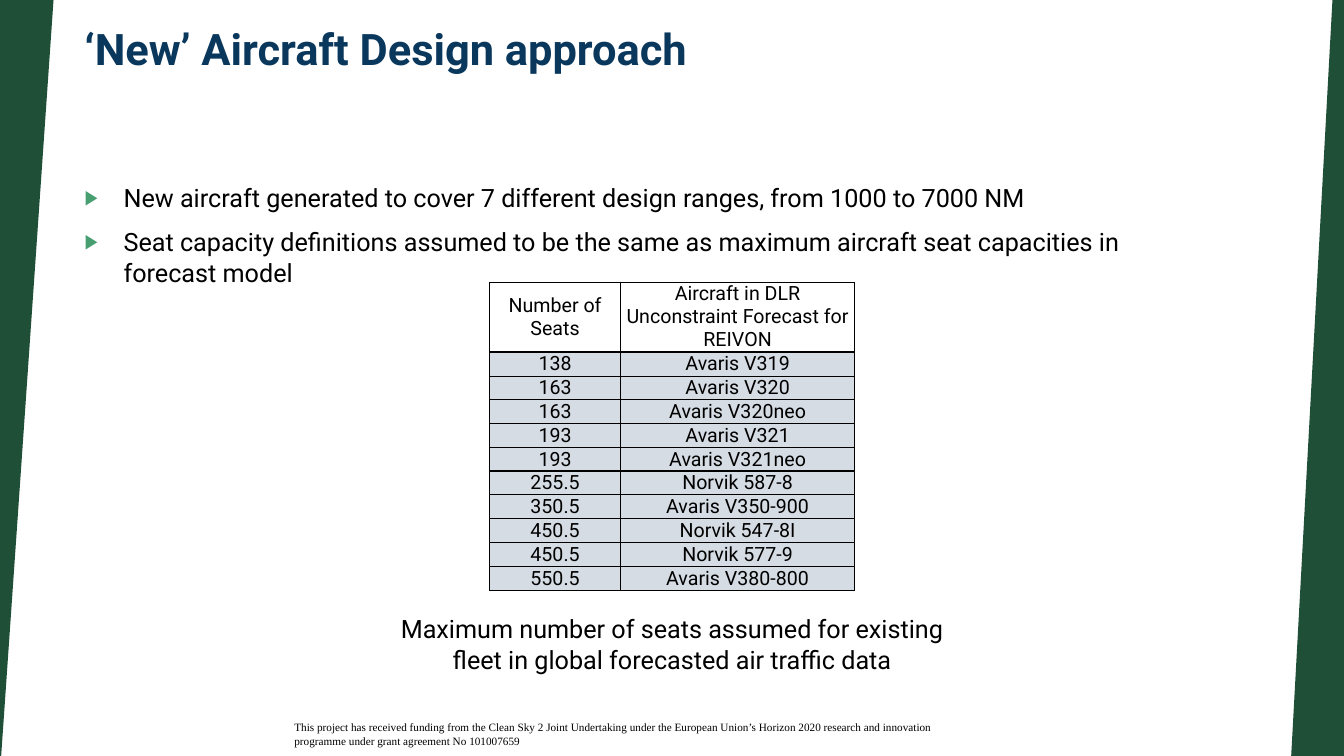
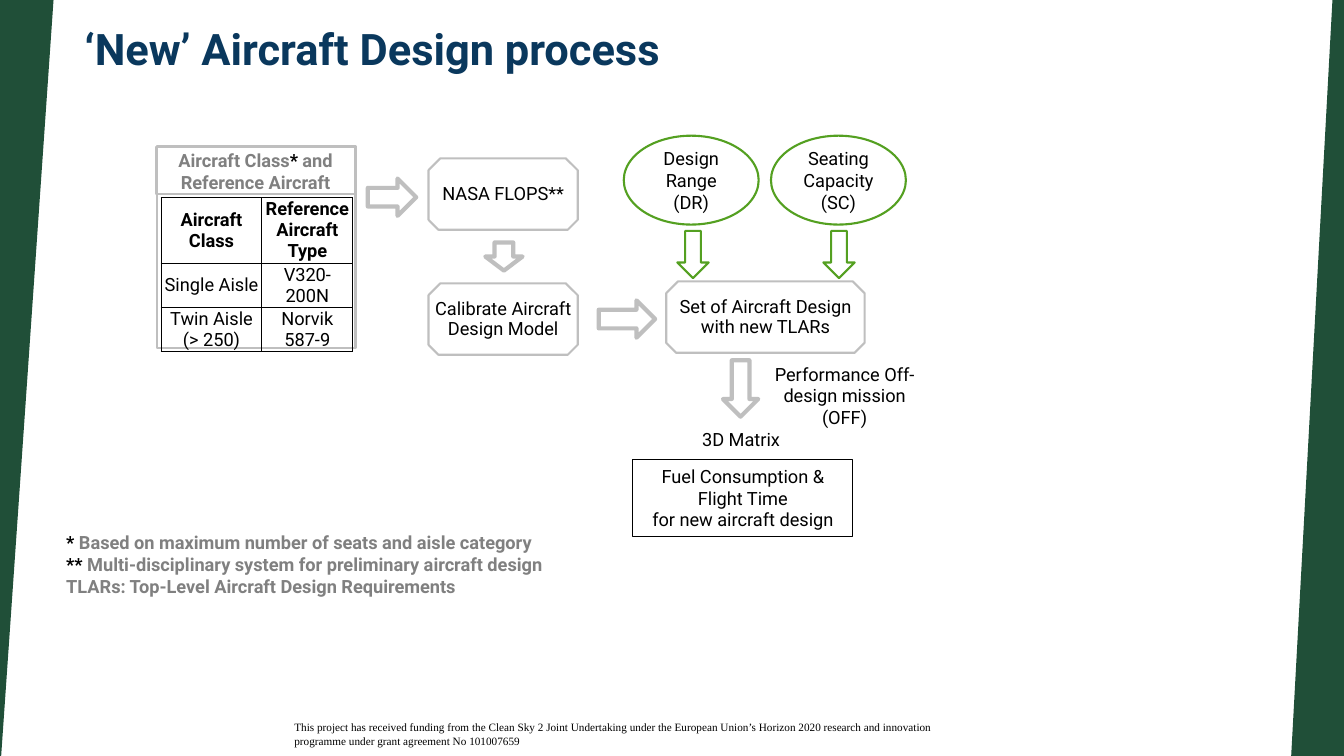
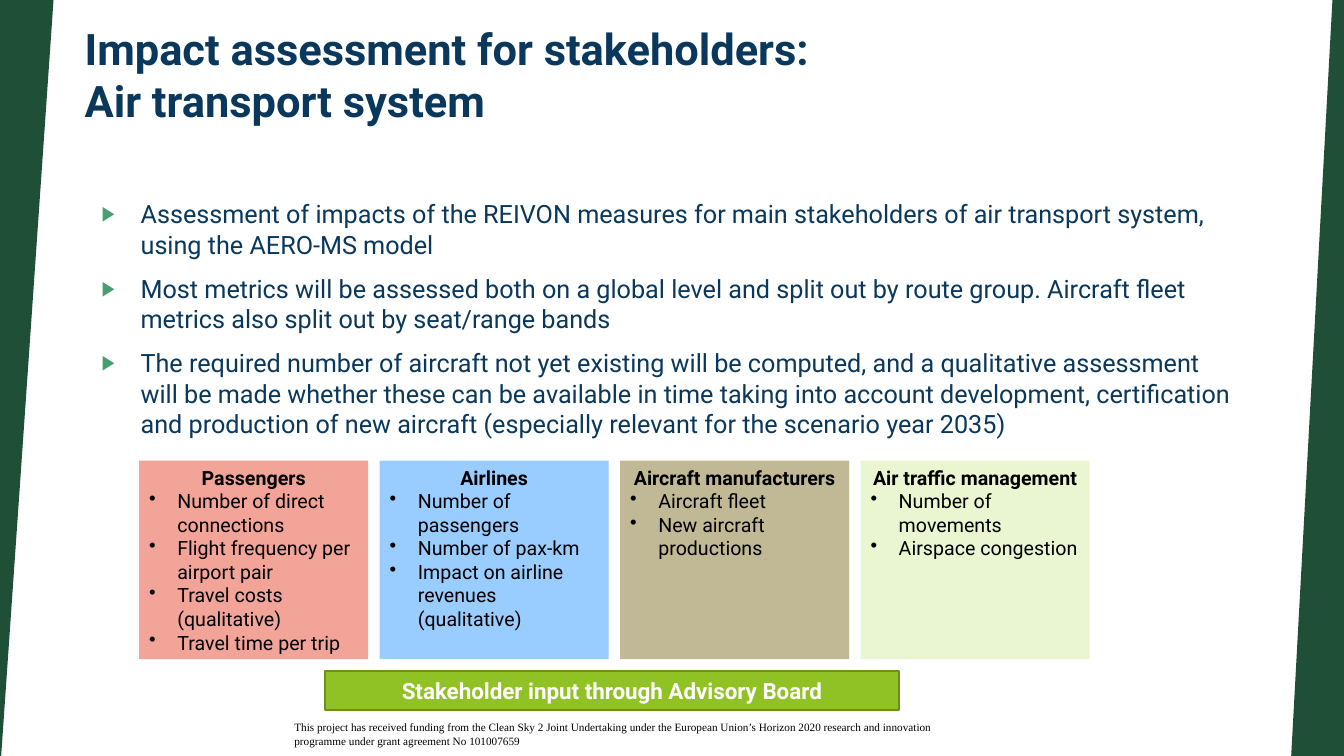
from dataclasses import dataclass

from lxml.etree import SubElement
from pptx import Presentation
from pptx.dml.color import RGBColor
from pptx.enum.shapes import MSO_SHAPE
from pptx.enum.text import MSO_ANCHOR, MSO_AUTO_SIZE, PP_ALIGN
from pptx.oxml.ns import qn
from pptx.util import Cm, Pt


@dataclass(frozen=True)
class Theme:
    font: str = "Roboto"
    footer_font: str = "Times New Roman"
    navy: str = "0A385D"
    black: str = "000000"
    white: str = "FFFFFF"
    band: str = "204F38"
    bullet: str = "479E70"
    gray: str = "808080"
    silver: str = "BFBFBF"
    green: str = "54A021"
    lime: str = "90C226"
    lime_edge: str = "6B901C"
    row: str = "D6DCE4"
    coral: str = "F2A499"
    sky: str = "99CCFF"
    sand: str = "C1B995"
    mint: str = "EAF6D1"
    title_size: int = 31
    body_size: int = 18
    banner_size: int = 16
    card_size: int = 14
    label_size: int = 13
    footer_size: int = 8


T = Theme()
WIDTH, HEIGHT = 33.87, 19.05
FOOTER = ("This project has received funding from the Clean Sky 2 Joint Undertaking "
          "under the European Union’s Horizon 2020 research and innovation "
          "programme under grant agreement No 101007659")


def rgb(color):
    return RGBColor.from_string(color)


def box(x, y, w, h):
    return Cm(x), Cm(y), Cm(w), Cm(h)


def add_bullet(p, char, indent, color, percent):
    pPr = p._p.get_or_add_pPr()
    pPr.set("marL", str(Cm(indent)))
    pPr.set("indent", str(-Cm(indent)))
    SubElement(SubElement(pPr, qn("a:buClr")), qn("a:srgbClr")).set("val", color)
    SubElement(pPr, qn("a:buSzPct")).set("val", str(percent * 1000))
    SubElement(pPr, qn("a:buChar")).set("char", char)


def add_text(tf, text, *, size=T.label_size, color=T.black, bold=False, font=T.font,
             align=PP_ALIGN.LEFT, bullet=None, before=0, spacing=None):
    """Add one paragraph; text is a string or a list of (piece, colour) pairs."""
    first = tf.paragraphs[0]
    p = tf.add_paragraph() if first.runs else first
    if bullet:
        add_bullet(p, *bullet)
    p.alignment = align
    p.space_before = Pt(0 if p is first else before)
    if spacing:
        p.line_spacing = spacing
    for piece, piece_color in [(text, color)] if isinstance(text, str) else text:
        for i, line in enumerate(piece.split("\n")):
            if i:
                p.add_line_break()
            r = p.add_run()
            r.text = line
            r.font.name, r.font.size, r.font.bold = font, Pt(size), bold
            r.font.color.rgb = rgb(piece_color)


def set_borders(cell, **widths):
    tcPr = cell._tc.get_or_add_tcPr()
    for side in "LRTB":
        ln = SubElement(tcPr, qn("a:ln" + side), w=str(Pt(widths[side])))
        fill = SubElement(ln, qn("a:solidFill"))
        SubElement(fill, qn("a:srgbClr")).set("val", T.black)


class Deck:
    def __init__(self):
        self.prs = Presentation()
        self.prs.slide_width, self.prs.slide_height = Cm(WIDTH), Cm(HEIGHT)
        self.s = None

    def new_slide(self, title, layout):
        first = self.s is None
        self.s = self.prs.slides.add_slide(self.prs.slide_layouts[layout])
        if first:
            self.build_master()
        tf = self.placeholder(self.s.shapes.title, 1.88, 0.43, 24.61, 3.66)
        add_text(tf, title, size=T.title_size, color=T.navy, bold=True)

    def build_master(self):
        """Place the side bands and the footer on the slide master."""
        parts = [
            self.polygon((0, 0), (1.35, 0), (0.03, HEIGHT), (0, HEIGHT)),
            self.polygon((33.58, 0), (WIDTH, 0), (WIDTH, HEIGHT), (32.54, HEIGHT)),
            self.textbox([FOOTER], 7.17, 18.03, 17.37, 1.02,
                         size=T.footer_size, font=T.footer_font),
        ]
        tree = self.prs.slide_master.shapes.element
        for i, sp in enumerate(parts):
            sp.element.xpath(".//p:cNvPr")[0].set("id", str(20 + i))
            tree.insert(2 + i, sp.element)

    def polygon(self, *points):
        start, *rest = [(Cm(x), Cm(y)) for x, y in points]
        builder = self.s.shapes.build_freeform(*start)
        builder.add_line_segments(rest, close=True)
        sp = builder.convert_to_shape()
        self.paint(sp, T.band, None)
        return sp

    def paint(self, sp, fill, line, width=1.5):
        sp.shadow.inherit = False
        if fill:
            sp.fill.solid()
            sp.fill.fore_color.rgb = rgb(fill)
        else:
            sp.fill.background()
        if line:
            sp.line.color.rgb = rgb(line)
            sp.line.width = Pt(width)
        else:
            sp.line.fill.background()

    def placeholder(self, sp, *at):
        sp.left, sp.top, sp.width, sp.height = box(*at)
        tf = sp.text_frame
        tf.word_wrap = True
        tf.auto_size = MSO_AUTO_SIZE.NONE
        tf.vertical_anchor = MSO_ANCHOR.TOP
        return tf

    def body(self, items, x, y, color):
        tf = self.placeholder(self.s.placeholders[1], x, y, 29.06, 11.79)
        for item in items:
            add_text(tf, item, size=T.body_size, color=color, before=10,
                     bullet=("▶", 0.98, T.bullet, 80))

    def textbox(self, lines, *at, **fmt):
        sp = self.s.shapes.add_textbox(*box(*at))
        sp.text_frame.word_wrap = True
        for line in lines:
            add_text(sp.text_frame, line, **fmt)
        return sp

    def shape(self, kind, *at, fill=None, line=T.silver, width=1.5, lines=(),
              anchor=MSO_ANCHOR.MIDDLE, **fmt):
        sp = self.s.shapes.add_shape(kind, *box(*at))
        self.paint(sp, fill, line, width)
        tf = sp.text_frame
        tf.word_wrap = True
        tf.vertical_anchor = anchor
        for text in lines:
            add_text(tf, text, **{"align": PP_ALIGN.CENTER, **fmt})
        return sp

    def step(self, text, *at):
        sp = self.shape(MSO_SHAPE.SNIP_2_SAME_RECTANGLE, *at, fill=T.white,
                        lines=[text], spacing=0.9)
        sp.adjustments[0], sp.adjustments[1] = 0.167, 0.139
        tf = sp.text_frame
        tf.margin_left = tf.margin_right = tf.margin_top = tf.margin_bottom = 0

    def card(self, heading, items, fill, *at):
        sp = self.shape(MSO_SHAPE.RECTANGLE, *at, fill=fill, line=None, lines=[heading],
                        anchor=MSO_ANCHOR.TOP, size=T.card_size, bold=True)
        for item in items:
            add_text(sp.text_frame, item, size=T.card_size,
                     bullet=("•", 0.71, T.black, 100))

    def table(self, rows, x, y, widths, heights, heavy, *, size, side=1.0,
              bold_head=False, row_fill=None, row_anchor=MSO_ANCHOR.MIDDLE):
        """heavy holds the numbers of the 1 pt rules, counted from the top edge."""
        frame = self.s.shapes.add_table(len(rows), len(widths),
                                        *box(x, y, sum(widths), sum(heights)))
        tbl = frame.table
        tbl.first_row = tbl.horz_banding = False
        for col, w in zip(tbl.columns, widths):
            col.width = Cm(w)
        for i, row in enumerate(rows):
            tbl.rows[i].height = Cm(heights[i])
            top, bottom = [1 if edge in heavy else 0.5 for edge in (i, i + 1)]
            for j, text in enumerate(row):
                cell = tbl.cell(i, j)
                cell.margin_left = cell.margin_right = Cm(0.02)
                cell.margin_top = cell.margin_bottom = 0
                cell.vertical_anchor = row_anchor if i else MSO_ANCHOR.MIDDLE
                set_borders(cell, L=side, R=side, T=top, B=bottom)
                if i and row_fill:
                    cell.fill.solid()
                    cell.fill.fore_color.rgb = rgb(row_fill)
                else:
                    cell.fill.background()
                for line in text.split("\n"):
                    add_text(cell.text_frame, line, size=size, align=PP_ALIGN.CENTER,
                             bold=bold_head and i == 0)


def approach_slide(d):
    d.new_slide("‘New’ Aircraft Design approach", 1)
    d.body(["New aircraft generated to cover 7 different design ranges, from 1000 to 7000 NM",
            "Seat capacity definitions assumed to be the same as maximum aircraft seat "
            "capacities in forecast model"], 1.88, 4.47, T.black)
    # Seat table
    rows = [("Number of Seats", "Aircraft in DLR Unconstraint Forecast for REIVON"),
            ("138", "Avaris V319"), ("163", "Avaris V320"), ("163", "Avaris V320neo"),
            ("193", "Avaris V321"), ("193", "Avaris V321neo"), ("255.5", "Norvik 587-8"),
            ("350.5", "Avaris V350-900"), ("450.5", "Norvik 547-8I"),
            ("450.5", "Norvik 577-9"), ("550.5", "Avaris V380-800")]
    d.table(rows, 12.34, 7.11, [3.3, 5.9], [1.76] + [0.6] * 10,
            {0, 1, 4, 6, 7, 8, 10, 11}, size=T.card_size, side=0.5,
            row_fill=T.row, row_anchor=MSO_ANCHOR.BOTTOM)
    d.textbox(["Maximum number of seats assumed for existing fleet in global "
               "forecasted air traffic data"], 9.7, 15.34, 14.48, 1.8,
              size=T.body_size, align=PP_ALIGN.CENTER)


def process_slide(d):
    d.new_slide("‘New’ Aircraft Design process", 5)
    # Reference aircraft panel
    d.shape(MSO_SHAPE.RECTANGLE, 3.96, 3.68, 5, 5.1)
    d.shape(MSO_SHAPE.RECTANGLE, 3.94, 3.71, 5, 1.19, bold=True,
            lines=[[("Aircraft Class", T.gray), ("*", T.black),
                    (" and Reference Aircraft", T.gray)]])
    d.table([("Aircraft Class", "Reference Aircraft Type"),
             ("Single Aisle", "V320-200N"),
             ("Twin Aisle\n(> 250)", "Norvik 587-9")],
            4.06, 4.98, [2.54, 2.29], [1.66, 1.11, 1.11], {0, 1, 2, 3},
            size=T.label_size, bold_head=True)
    # Process steps
    for text, *at in [("NASA FLOPS**", 10.8, 3.99, 3.76, 1.8),
                      ("Calibrate Aircraft Design Model", 10.8, 7.14, 3.76, 1.8),
                      ("Set of Aircraft Design with new TLARs", 16.79, 7.09, 5, 1.8)]:
        d.step(text, *at)
    # Flow arrows
    for kind, *at in [(MSO_SHAPE.RIGHT_ARROW, 9.27, 4.5, 1.22, 0.94),
                      (MSO_SHAPE.DOWN_ARROW, 12.23, 6.11, 0.94, 0.71),
                      (MSO_SHAPE.RIGHT_ARROW, 15.09, 7.57, 1.42, 0.94),
                      (MSO_SHAPE.DOWN_ARROW, 18.22, 9.08, 0.89, 1.42)]:
        d.shape(kind, *at, width=3)
    # Design inputs
    for text, x, arrow_x in [("Design Range (DR)", 15.72, 17.07),
                             ("Seating Capacity (SC)", 19.43, 20.75)]:
        d.shape(MSO_SHAPE.FLOWCHART_CONNECTOR, x, 3.42, 3.4, 2.24, fill=T.white,
                line=T.green, lines=[text])
        d.shape(MSO_SHAPE.DOWN_ARROW, arrow_x, 5.82, 0.79, 1.19, fill=T.white, line=T.green)
    # Results and footnotes
    d.textbox(["Performance Off-design mission (OFF)"], 19.05, 9.02, 4.47, 1.93,
              align=PP_ALIGN.CENTER)
    d.textbox(["3D Matrix"], 17.2, 10.67, 2.95, 0.81, align=PP_ALIGN.CENTER)
    d.shape(MSO_SHAPE.RECTANGLE, 15.95, 11.58, 5.54, 1.93, line=T.black, width=0.75,
            lines=["Fuel Consumption & Flight Time", "for new aircraft design"])
    d.textbox([[("*", T.black), (" Based on maximum number of seats and aisle category", T.gray)],
               [("**", T.black),
                (" Multi-disciplinary system for preliminary aircraft design", T.gray)],
               [("TLARs: Top-Level Aircraft Design Requirements", T.gray)]],
              1.42, 13.26, 13.16, 2.62, bold=True)


def impact_slide(d):
    d.new_slide("Impact assessment for stakeholders:\nAir transport system", 1)
    d.body(["Assessment of impacts of the REIVON measures for main stakeholders of air "
            "transport system, using the AERO-MS model",
            "Most metrics will be assessed both on a global level and split out by route "
            "group. Aircraft fleet metrics also split out by seat/range bands",
            "The required number of aircraft not yet existing will be computed, and a "
            "qualitative assessment will be made whether these can be available in time "
            "taking into account development, certification and production of new aircraft "
            "(especially relevant for the scenario year 2035)"], 2.31, 4.88, T.navy)
    # Stakeholder cards
    cards = [("Passengers", T.coral,
              ["Number of direct connections", "Flight frequency per airport pair",
               "Travel costs (qualitative)", "Travel time per trip"]),
             ("Airlines", T.sky,
              ["Number of passengers", "Number of pax-km",
               "Impact on airline revenues (qualitative)"]),
             ("Aircraft manufacturers", T.sand, ["Aircraft fleet", "New aircraft productions"]),
             ("Air traffic management", T.mint, ["Number of movements", "Airspace congestion"])]
    for i, (heading, fill, items) in enumerate(cards):
        d.card(heading, items, fill, 3.51 + 6.06 * i, 11.61, 5.77, 5)
    d.shape(MSO_SHAPE.RECTANGLE, 8.2, 16.92, 14.45, 0.97, fill=T.lime, line=T.lime_edge,
            lines=["Stakeholder input through Advisory Board"],
            size=T.banner_size, color=T.white, bold=True)


def main():
    d = Deck()
    approach_slide(d)
    process_slide(d)
    impact_slide(d)
    d.prs.save("out.pptx")


if __name__ == "__main__":
    main()
